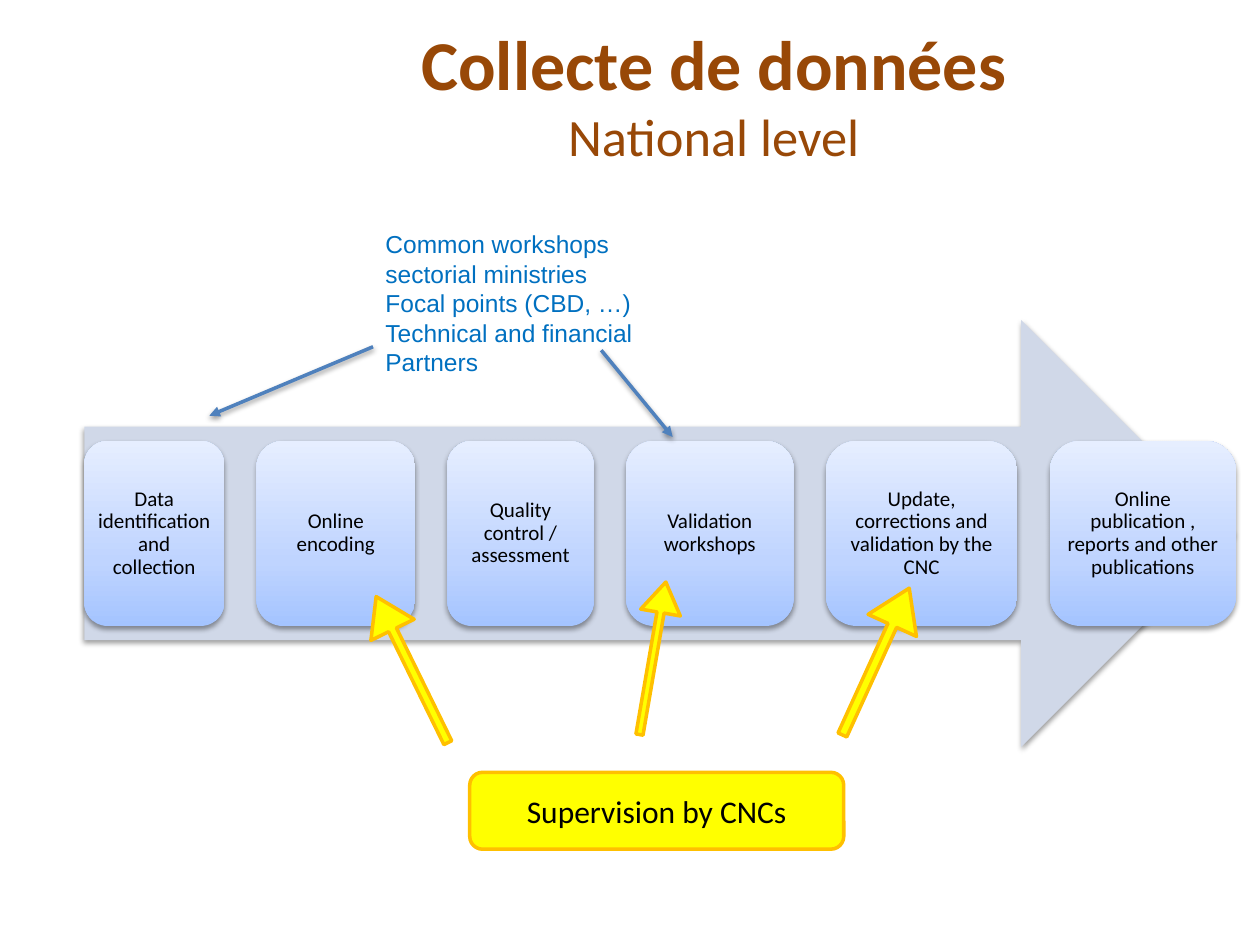
"""Build the slide on national data collection and its supervision."""
from copy import deepcopy

from lxml import etree
from pptx import Presentation
from pptx import util as u
from pptx.dml.color import RGBColor
from pptx.enum import shapes, text
from pptx.oxml import ns

BROWN = RGBColor(0x98, 0x48, 0x07)
TEXT_BLUE = RGBColor(0x00, 0x70, 0xC0)
LINE_BLUE = RGBColor(0x4F, 0x81, 0xBD)
PALE_BLUE = RGBColor(0xD0, 0xD8, 0xE8)
YELLOW = RGBColor(0xFF, 0xFF, 0x00)
AMBER = RGBColor(0xFF, 0xC0, 0x00)
BLACK = RGBColor(0x00, 0x00, 0x00)
CARD_STOPS = [
    (0, RGBColor(0xA4, 0xC4, 0xFF)),
    (0.35, RGBColor(0xBF, 0xD4, 0xFF)),
    (1, RGBColor(0xE6, 0xEE, 0xFF)),
]

TITLE = [("Collecte de données", 40, True), ("National level", 30, False)]
WORKSHOPS = [
    ("Common workshops", 14, False),
    ("sectorial ministries", 14, False),
    ("Focal points (CBD, …)", 14, False),
    ("Technical and financial Partners", 14, False),
]
STEPS = [
    ("Data identification and collection", 2.82),
    ("Online encoding", 3.2),
    ("Quality control / assessment", 2.95),
    ("Validation workshops", 3.38),
    ("Update, corrections and validation by the CNC", 3.86),
    ("Online publication , reports and other publications", 3.76),
]
SUPERVISION = [("Supervision by CNCs", 18, False)]
SUPERVISION_ARROWS = [
    ((7.82, 11.86, 0.97, 3.28), 153.9),
    ((12.75, 11.71, 0.81, 3.12), 189.8),
    ((17.12, 11.71, 1.07, 3.25), 204.5),
]
WORKSHOP_LINKS = [(12.12, 7.06, 13.56, 8.81), (7.52, 6.99, 4.22, 8.38)]

FLOW_LEFT, STEP_TOP, STEP_HEIGHT, STEP_GAP = 1.7, 8.89, 3.73, 0.65


def cm(values):
    return [u.Cm(value) for value in values]


def write(frame, lines, color=BLACK, font="Calibri", align=text.PP_ALIGN.CENTER,
          anchor=text.MSO_ANCHOR.MIDDLE, spacing=None, inset=None):
    frame.word_wrap = True
    frame.vertical_anchor = anchor
    if inset is not None:
        frame.margin_left = frame.margin_right = u.Cm(inset)
        frame.margin_top = frame.margin_bottom = u.Cm(inset)
    paragraph = frame.paragraphs[0]
    paragraph.alignment = align
    if spacing:
        paragraph.line_spacing = spacing
    for index, (words, size, bold) in enumerate(lines):
        if index:
            paragraph.add_line_break()
        run = paragraph.add_run()
        run.text = words
        run.font.name, run.font.size, run.font.bold = font, u.Pt(size), bold
        run.font.color.rgb = color


def add_shadow(effects):
    shadow = etree.SubElement(effects, ns.qn("a:outerShdw"), blurRad=str(u.Pt(3.1)),
                              dist=str(u.Pt(1.6)), dir="5400000", rotWithShape="0")
    tint = etree.SubElement(shadow, ns.qn("a:srgbClr"), val=str(BLACK))
    etree.SubElement(tint, ns.qn("a:alpha"), val="38000")


def add_form(slide, kind, box, fill=None, line=None, shadow=False):
    form = slide.shapes.add_shape(kind, *cm(box))
    form.shadow.inherit = False
    if fill is not None:
        form.fill.solid()
        form.fill.fore_color.rgb = fill
    if line is None:
        form.line.fill.background()
    else:
        form.line.color.rgb, form.line.width = line, u.Pt(2)
    if shadow:
        add_shadow(form._element.spPr.find(ns.qn("a:effectLst")))
    return form


def add_step(slide, label, left, width):
    step = add_form(slide, shapes.MSO_SHAPE.ROUNDED_RECTANGLE,
                    (left, STEP_TOP, width, STEP_HEIGHT), shadow=True)
    step.fill.gradient()
    step.fill.gradient_angle = 90
    first = step._element.spPr.find(".//" + ns.qn("a:gs"))
    first.addnext(deepcopy(first))
    for stop, (position, color) in zip(step.fill.gradient_stops, CARD_STOPS):
        stop.position, stop.color.rgb = position, color
    write(step.text_frame, [(label, 12, False)], spacing=0.9, inset=0.13)


def add_link(slide, ends):
    link = slide.shapes.add_connector(shapes.MSO_CONNECTOR.STRAIGHT, *cm(ends))
    link.line.color.rgb, link.line.width = LINE_BLUE, u.Pt(2)
    properties = link._element.spPr
    etree.SubElement(properties.find(ns.qn("a:ln")), ns.qn("a:tailEnd"), type="triangle")
    add_shadow(etree.SubElement(properties, ns.qn("a:effectLst")))


def main():
    deck = Presentation()
    deck.slide_width, deck.slide_height = u.Cm(25.4), u.Cm(19.05)
    slide = deck.slides.add_slide(deck.slide_layouts[6])

    add_form(slide, shapes.MSO_SHAPE.RIGHT_ARROW, (FLOW_LEFT, 6.45, 23.19, 8.61),
             PALE_BLUE, shadow=True)
    left = FLOW_LEFT
    for label, width in STEPS:
        add_step(slide, label, left, width)
        left += width + STEP_GAP

    supervision = add_form(slide, shapes.MSO_SHAPE.ROUNDED_RECTANGLE,
                           (9.47, 15.57, 7.54, 1.55), YELLOW, AMBER)
    write(supervision.text_frame, SUPERVISION)
    for box, rotation in SUPERVISION_ARROWS:
        arrow = add_form(slide, shapes.MSO_SHAPE.DOWN_ARROW, box, YELLOW, AMBER)
        arrow.adjustments[0], arrow.adjustments[1] = 0.18, 0.77
        arrow.rotation = rotation

    title = slide.shapes.add_textbox(*cm((4.09, 0.3, 20.6, 3.18)))
    write(title.text_frame, TITLE, color=BROWN)
    workshops = slide.shapes.add_textbox(*cm((7.52, 4.5, 7.47, 2.64)))
    write(workshops.text_frame, WORKSHOPS, color=TEXT_BLUE, font="Arial",
          align=text.PP_ALIGN.LEFT, anchor=text.MSO_ANCHOR.TOP)
    workshops.text_frame.auto_size = text.MSO_AUTO_SIZE.SHAPE_TO_FIT_TEXT
    for ends in WORKSHOP_LINKS:
        add_link(slide, ends)

    deck.save("out.pptx")


if __name__ == "__main__":
    main()
